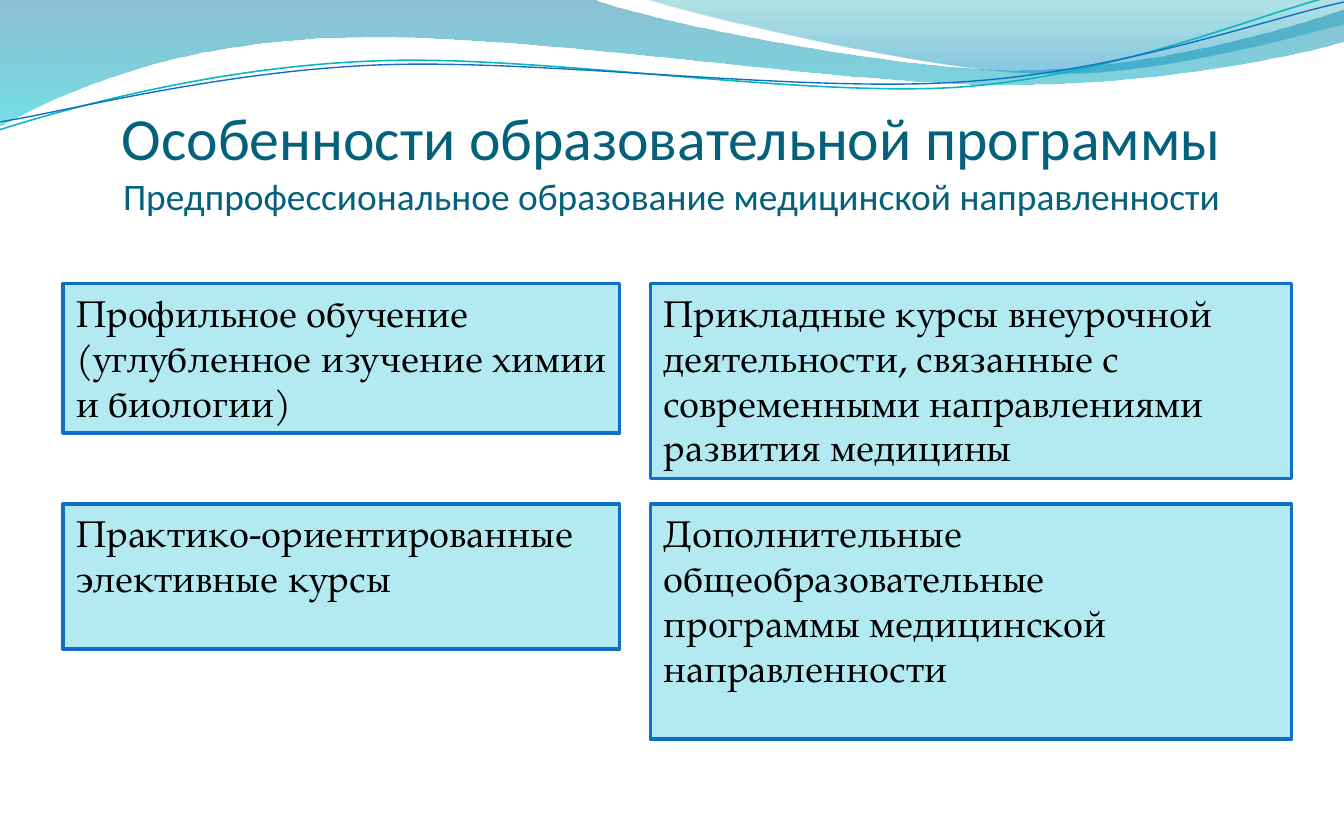
"""Build a slide on the features of a medical education programme."""
from lxml import etree
from pptx import Presentation
from pptx.dml.color import RGBColor
from pptx.enum.shapes import MSO_SHAPE
from pptx.enum.text import MSO_ANCHOR, PP_ALIGN
from pptx.oxml.ns import qn
from pptx.util import Inches, Pt

RECTANGLE = MSO_SHAPE.RECTANGLE
TOP, BOTTOM = MSO_ANCHOR.TOP, MSO_ANCHOR.BOTTOM
LEFT, CENTER = PP_ALIGN.LEFT, PP_ALIGN.CENTER

WIDTH, HEIGHT = 10, 6.25
STRAND_ROTATION = 357.3
COLORS = {
    "title": "04617B", "text": "000000", "box": "B3EAF2", "border": "0F6FC6",
    "teal": "0AB8BF", "deep": "0074A1", "cyan": "00C6CF",
    "sea": "00A1A9", "sky": "008BBF",
}
TITLE_LINES = [
    ("Особенности образовательной программы", 32),
    ("Предпрофессиональное образование медицинской направленности", 20),
]
COLUMNS = [(0.47, 4.14), (4.84, 4.77)]
ROWS = [2.11, 3.75]
BOXES = [
    (0, 0, 1.11, ["Профильное обучение (углубленное изучение химии и биологии)"]),
    (1, 0, 1.45, ["Прикладные курсы внеурочной деятельности, связанные с "
                  "современными направлениями развития медицины"]),
    (0, 1, 1.08, ["Практико-ориентированные элективные курсы"]),
    (1, 1, 1.75, ["Дополнительные общеобразовательные",
                  "программы медицинской направленности"]),
]
WAVES = [
    ([(0, 0), (4.4, -0.01), (4.76, 0.14, 6.64, 0.52, 7.58, 0.52),
      (8.53, 0.52, 9.58, 0.21, 10, 0.07), (10.01, 0.3),
      (9.83, 0.37, 8.7, 0.63, 7.46, 0.63), (6.22, 0.63, 3.82, 0.23, 2.57, 0.28),
      (1.29, 0.3, 0.46, 0.69, -0.01, 0.94), (0, 0)],
     [(0, "deep", 45), (1, "cyan", 55)]),
    ([(4.79, -0.01), (5.09, 0.09, 6.82, 0.51, 7.69, 0.54),
      (8.56, 0.58, 9.61, 0.27, 10, 0.18), (10, 0), (4.79, -0.01)],
     [(0, "sea", 30), (0.8, "sky", 45)]),
]
STRANDS = [
    ([(-0.02, 0.73), (0.47, 0.6, 1.58, 0.34, 2.77, 0.35),
      (3.96, 0.35, 5.91, 0.77, 7.12, 0.75), (8.32, 0.72, 9.4, 0.3, 10, 0.19)],
     "teal", 0.85),
    ([(-0.01, 0.67), (0.46, 0.62, 1.64, 0.37, 2.83, 0.38),
      (4.03, 0.39, 5.96, 0.74, 7.16, 0.71), (8.35, 0.69, 9.42, 0.35, 10.02, 0.25)],
     "border", 0.75),
]


def color(name):
    return RGBColor.from_string(COLORS[name])


def apply(target, values):
    for name, value in values.items():
        setattr(target, name, value)


def add_outline(slide, steps, close):
    points = [(Inches(x), Inches(y))
              for step in steps for x, y in zip(step[::2], step[1::2])]
    builder = slide.shapes.build_freeform(*points[0])
    builder.add_line_segments(points[1:], close=close)
    shape = builder.convert_to_shape()
    shape.shadow.inherit = False
    segments = iter(list(shape._element.iter(qn("a:lnTo"))))
    for step in steps[1:]:
        group = [next(segments) for _ in range(len(step) // 2)]
        if len(group) == 3:
            curve = etree.Element(qn("a:cubicBezTo"))
            group[0].addprevious(curve)
            for segment in group:
                curve.append(segment[0])
                segment.getparent().remove(segment)
    return shape


def add_wave(slide, steps, stops):
    shape = add_outline(slide, steps, True)
    shape.line.fill.background()
    shape.fill.gradient()
    shape.fill.gradient_angle = 270
    for stop, (position, name, opacity) in zip(shape.fill.gradient_stops, stops):
        stop.position = position
        stop.color.rgb = color(name)
    colors = shape._element.spPr.iter(qn("a:srgbClr"))
    for element, (position, name, opacity) in zip(colors, stops):
        etree.SubElement(element, qn("a:alpha")).set("val", str(opacity * 1000))


def add_strand(slide, steps, name, width):
    shape = add_outline(slide, steps, False)
    shape.rotation = STRAND_ROTATION
    shape.fill.background()
    shape.line.color.rgb = color(name)
    shape.line.width = Pt(width)


def add_run(paragraph, text, size, font, name):
    run = paragraph.add_run()
    run.text = text
    apply(run.font, {"size": Pt(size), "name": font})
    run.font.color.rgb = color(name)


def place_title(slide):
    title = slide.shapes.title
    apply(title, {"left": Inches(0.47), "top": Inches(0.74),
                  "width": Inches(9.06), "height": Inches(1.18)})
    frame = title.text_frame
    apply(frame, {"margin_left": 0, "margin_top": 0, "margin_right": 0,
                  "margin_bottom": Inches(0.3), "vertical_anchor": BOTTOM,
                  "word_wrap": True})
    paragraph = frame.paragraphs[0]
    paragraph.alignment = CENTER
    for index, (text, size) in enumerate(TITLE_LINES):
        if index:
            paragraph.add_line_break()
        add_run(paragraph, text, size, "Calibri", "title")
    slide.shapes._spTree.append(title._element)


def add_box(slide, column, row, height, texts):
    left, width = COLUMNS[column]
    shape = slide.shapes.add_shape(
        RECTANGLE, Inches(left), Inches(ROWS[row]), Inches(width), Inches(height))
    shape.shadow.inherit = False
    shape.fill.solid()
    shape.fill.fore_color.rgb = color("box")
    shape.line.color.rgb = color("border")
    shape.line.width = Pt(2)
    frame = shape.text_frame
    apply(frame, {"word_wrap": True, "vertical_anchor": TOP})
    for index, text in enumerate(texts):
        paragraph = frame.add_paragraph() if index else frame.paragraphs[0]
        paragraph.alignment = LEFT
        add_run(paragraph, text, 20, "TeX Gyre Pagella", "text")


def main():
    presentation = Presentation()
    apply(presentation, {"slide_width": Inches(WIDTH), "slide_height": Inches(HEIGHT)})
    slide = presentation.slides.add_slide(presentation.slide_layouts[5])
    for wave in WAVES:
        add_wave(slide, *wave)
    for strand in STRANDS:
        add_strand(slide, *strand)
    place_title(slide)
    for box in BOXES:
        add_box(slide, *box)
    presentation.save("out.pptx")


if __name__ == "__main__":
    main()
